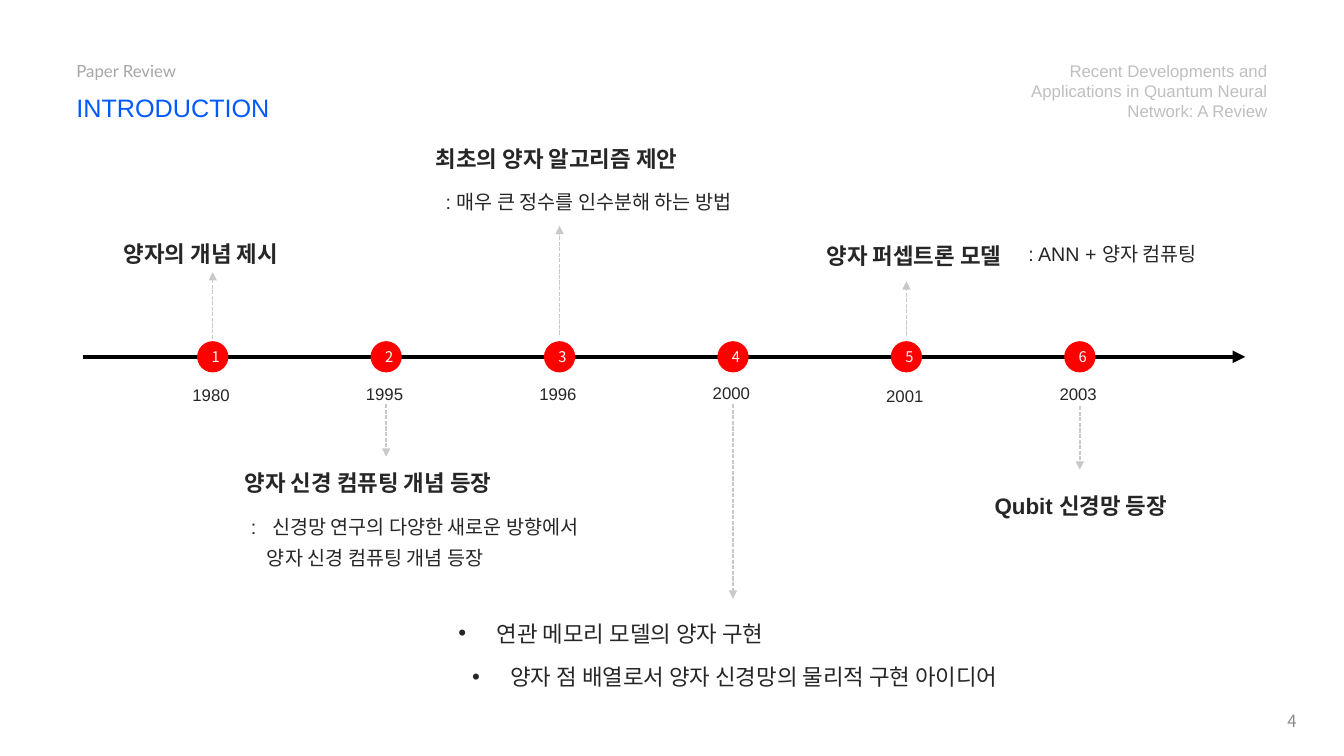
import pptx
import pptx.dml.color
import pptx.enum.dml
import pptx.enum.shapes
import pptx.enum.text
import pptx.oxml
import pptx.oxml.ns
import pptx.util
from pptx.util import Inches

RGBColor = pptx.dml.color.RGBColor
ALIGN = pptx.enum.text.PP_ALIGN
BLACK = RGBColor(0x00, 0x00, 0x00)
WHITE = RGBColor(0xFF, 0xFF, 0xFF)
RED = RGBColor(0xFF, 0x00, 0x00)
BLUE = RGBColor(0x00, 0x5A, 0xFF)
INK = RGBColor(0x26, 0x26, 0x26)
PAGE_GREY = RGBColor(0x8C, 0x8C, 0x8C)
LABEL_GREY = RGBColor(0xA6, 0xA6, 0xA6)
PAPER_GREY = RGBColor(0xBF, 0xBF, 0xBF)
ARROW_GREY = RGBColor(0xC9, 0xC9, 0xC9)
KOREAN = "Noto Sans CJK KR"


def add_xml(parent, tag, **attributes):
    child = pptx.oxml.parse_xml(f"<a:{tag} {pptx.oxml.ns.nsdecls('a')}/>")
    for name, value in attributes.items():
        child.set(name, value)
    parent.append(child)


class TimelineSlide:
    """Holds the text style and the slide being built."""

    def __init__(self, slide, font="Arial", line_spacing=22):
        self.slide = slide
        self.font = font
        self.line_spacing = pptx.util.Pt(line_spacing)

    def add_words(self, paragraph, words, size, color, bold=False, font=None):
        run = paragraph.add_run()
        run.text = words
        run.font.size = pptx.util.Pt(size)
        run.font.bold = bold
        run.font.name = font or self.font
        run.font.color.rgb = color
        add_xml(run.font._element, "ea", typeface=KOREAN)

    def text(self, box, lines, size, color=INK, bold=False, align=ALIGN.LEFT,
             font=None, spaced=True, indents=(), bullet=None, middle=False):
        frame = self.slide.shapes.add_textbox(*map(Inches, box)).text_frame
        frame.word_wrap = True
        if middle:
            frame.vertical_anchor = pptx.enum.text.MSO_ANCHOR.MIDDLE
        else:
            frame.auto_size = pptx.enum.text.MSO_AUTO_SIZE.SHAPE_TO_FIT_TEXT
        for index, words in enumerate(lines):
            paragraph = frame.paragraphs[0] if index == 0 else frame.add_paragraph()
            paragraph.alignment = align
            if spaced:
                paragraph.line_spacing = self.line_spacing
            if indents:
                left, first = indents[index]
                properties = paragraph._p.get_or_add_pPr()
                properties.set("marL", str(Inches(left)))
                properties.set("indent", str(Inches(first)))
                if bullet:
                    add_xml(properties, "buFont", typeface="Arial")
                    add_xml(properties, "buChar", char=bullet)
            self.add_words(paragraph, words, size, color, bold, font)

    def arrow(self, start, end, color=ARROW_GREY, width=1, dashed=True):
        arrow = self.slide.shapes.add_connector(
            pptx.enum.shapes.MSO_CONNECTOR.STRAIGHT, *map(Inches, start + end))
        arrow.line.color.rgb = color
        arrow.line.width = pptx.util.Pt(width)
        if dashed:
            arrow.line.dash_style = pptx.enum.dml.MSO_LINE.SQUARE_DOT
            arrow.line._ln.find(pptx.oxml.ns.qn("a:prstDash")).set("val", "sysDash")
        add_xml(arrow.line._ln, "tailEnd", type="triangle")
        add_xml(arrow._element.spPr, "effectLst")

    def marker(self, center, middle, number, diameter=0.31):
        corner = (center - diameter / 2, middle - diameter / 2)
        dot = self.slide.shapes.add_shape(
            pptx.enum.shapes.MSO_SHAPE.OVAL, *map(Inches, corner + (diameter, diameter)))
        dot.shadow.inherit = False
        dot.fill.solid()
        dot.fill.fore_color.rgb = RED
        dot.line.fill.background()
        dot.text_frame.vertical_anchor = pptx.enum.text.MSO_ANCHOR.MIDDLE
        label = dot.text_frame.paragraphs[0]
        label.alignment = ALIGN.CENTER
        self.add_words(label, str(number), 10.5, WHITE, font=KOREAN)


def main():
    deck = pptx.Presentation()
    deck.slide_width, deck.slide_height = Inches(13.33), Inches(7.5)
    page = TimelineSlide(deck.slides.add_slide(deck.slide_layouts[6]))

    # Header and page number
    page.text((0.66, 0.55, 3.14, 0.3), ["Paper Review"], 12, LABEL_GREY,
              font="Lato", spaced=False)
    page.text((0.66, 0.87, 2.36, 0.4), ["INTRODUCTION"], 18, BLUE, spaced=False)
    page.text((9.6, 0.55, 3.07, 0.5),
              ["Recent Developments and Applications in Quantum Neural Network: A Review"],
              12, PAPER_GREY, align=ALIGN.RIGHT, spaced=False)
    page.text((9.96, 6.95, 3, 0.4), ["4"], 12, PAGE_GREY, align=ALIGN.RIGHT,
              font=KOREAN, spaced=False, middle=True)

    # Time axis with events: year, top of the year label, arrow start and end
    axis_y, first_center, pitch = 3.54, 2.11, 1.72
    page.arrow((0.82, axis_y), (12.35, axis_y), BLACK, 3, dashed=False)
    events = [
        ("1980", 3.66, 3.36, 2.7),
        ("1995", 3.65, 4.01, 4.53),
        ("1996", 3.65, 3.32, 2.24),
        ("2000", 3.64, 4.01, 5.94),
        ("2001", 3.67, 3.33, 2.79),
        ("2003", 3.65, 4.03, 4.66),
    ]
    for index, (year, year_top, arrow_start, arrow_end) in enumerate(events):
        center = first_center + index * pitch
        page.arrow((center, arrow_start), (center, arrow_end))
        page.marker(center, axis_y, index + 1)
        page.text((center - 0.3, year_top, 0.58, 0.37), [year], 12)

    # Event titles
    titles = [
        ((1.13, 2.29, 1.95, 0.38), "양자의 개념 제시", ALIGN.LEFT),
        ((2.33, 4.57, 3.66, 0.38), "양자 신경 컴퓨팅 개념 등장", ALIGN.LEFT),
        ((4.06, 1.35, 2.92, 0.38), "최초의 양자 알고리즘 제안", ALIGN.CENTER),
        ((7.72, 2.31, 2.69, 0.38), "양자 퍼셉트론 모델", ALIGN.CENTER),
        ((9.23, 4.79, 2.98, 0.38), "Qubit 신경망 등장", ALIGN.CENTER),
    ]
    for box, title, align in titles:
        page.text(box, [title], 16, bold=True, align=align)

    # Event details
    page.text((3.95, 1.76, 3.78, 0.38), [": 매우 큰 정수를 인수분해 하는 방법"], 14,
              align=ALIGN.CENTER)
    page.text((9.76, 2.28, 2.55, 0.38), [": ANN + 양자 컴퓨팅"], 14, align=ALIGN.CENTER)
    page.text((2.39, 4.99, 3.96, 0.68),
              [":\t신경망 연구의 다양한 새로운 방향에서", "양자 신경 컴퓨팅 개념 등장"], 14,
              indents=[(0.21, -0.21), (0.16, 0)])

    # Bullets for 2000
    bullets = [
        ((4.27, 6.06, 3.58, 0.38), "연관 메모리 모델의 양자 구현"),
        ((4.27, 6.49, 6.04, 0.38), "양자 점 배열로서 양자 신경망의 물리적 구현 아이디어"),
    ]
    for box, idea in bullets:
        page.text(box, [idea], 16, align=ALIGN.CENTER, indents=[(0.38, -0.38)], bullet="•")

    deck.save("out.pptx")


if __name__ == "__main__":
    main()
